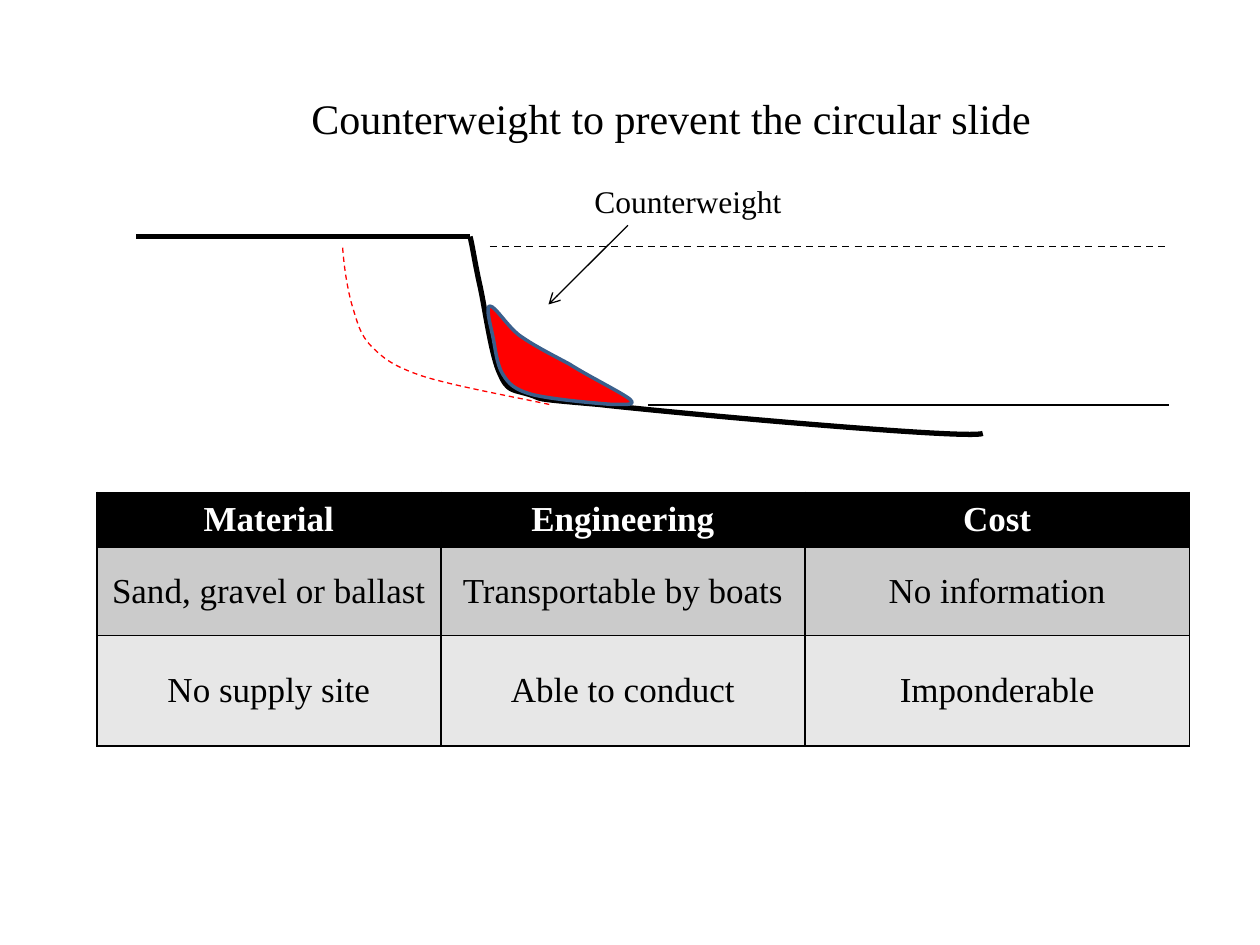
from dataclasses import dataclass

from lxml.etree import SubElement
from pptx import Presentation
from pptx.dml.color import RGBColor as Color
from pptx.enum.dml import MSO_LINE_DASH_STYLE as Dash
from pptx.enum.shapes import MSO_CONNECTOR as Connector
from pptx.enum.text import MSO_ANCHOR as Anchor, MSO_AUTO_SIZE as AutoSize, PP_ALIGN as Align
from pptx.oxml import parse_xml
from pptx.oxml.ns import nsdecls, qn
from pptx.util import Pt


@dataclass(frozen=True)
class Theme:
    font: str = "Times New Roman"
    title: int = 24
    label: int = 18
    cell: int = 20
    ink: str = "000000"
    paper: str = "FFFFFF"
    red: str = "FF0000"
    outline: str = "3A5F8C"
    bands: tuple = ("000000", "CBCBCB", "E7E7E7")


THEME = Theme()

# Bezier chains in points, relative to the section box: a start, then three points per curve.
SLOPE = [
    (483.6, 112.7), (476.4, 116.3), (308.6, 101.2), (264, 96.1),
    (222.2, 92.5), (233.8, 93.2), (224.4, 90.4),
    (215, 87.5), (212.2, 88.9), (207.8, 78.8),
    (202.8, 68.8), (199.2, 41.4), (196.3, 28.4),
    (193.4, 15.5), (192, 5.4), (190.6, 0.2),
]
SLIP_CIRCLE = [
    (235.9, 96.1), (219.4, 92.5), (179.8, 85.3), (162.5, 79.6),
    (145.9, 73.8), (140.9, 69.5), (134.4, 63),
    (127.9, 56.5), (126.5, 50), (123.6, 40.7),
    (120.7, 31.3), (118.6, 17.6), (117.8, 6.1),
]
COUNTERWEIGHT = [
    (225.8, 90.4), (236.6, 93.2), (261.8, 95.4), (271.2, 96.1),
    (280.6, 96.1), (285.6, 96.8), (282, 93.2),
    (277.7, 89.6), (257.5, 79.6), (247.4, 73.1),
    (236.6, 67.3), (226.6, 62.3), (218.6, 56.5),
    (211.4, 50.8), (205, 40), (202.1, 40),
    (199.2, 39.2), (202.1, 50), (203.5, 56.5),
    (205, 63), (205.7, 73.1), (209.3, 78.8),
    (212.9, 84.6), (215.8, 87.5), (225.8, 90.4),
]
ROWS = [
    ("Material", "Engineering", "Cost"),
    ("Sand, gravel or ballast", "Transportable by boats", "No information"),
    ("No supply site", "Able to conduct", "Imponderable"),
]


def style_text(para, size, color=THEME.ink, bold=False, align=Align.CENTER):
    para.alignment = align
    font = para.font
    font.name, font.size, font.bold = THEME.font, Pt(size), bold
    font.color.rgb = Color.from_string(color)


def style_line(line, color, width, dash=None):
    line.color.rgb = Color.from_string(color)
    line.width = Pt(width)
    if dash:
        line.dash_style = dash


def add_text(page, box, text, size, align=Align.CENTER, wrap=True):
    frame = page.shapes.add_textbox(*map(Pt, box)).text_frame
    frame.word_wrap = wrap
    frame.auto_size = AutoSize.SHAPE_TO_FIT_TEXT
    para = frame.paragraphs[0]
    para.text = text
    style_text(para, size, align=align)


def add_line(page, origin, start, end, width, dash=None, arrow=False):
    left, top = origin
    ends = (left + start[0], top + start[1], left + end[0], top + end[1])
    connector = page.shapes.add_connector(Connector.STRAIGHT, *map(Pt, ends))
    style_line(connector.line, THEME.ink, width, dash)
    properties = connector._element.spPr
    if arrow:
        SubElement(properties.find(qn("a:ln")), qn("a:tailEnd"), type="arrow")
    SubElement(properties, qn("a:effectLst"))


def bend_segments(shape):
    """Turn each three straight segments into one cubic Bezier curve."""
    segments = list(shape._element.iter(qn("a:lnTo")))
    for first in range(0, len(segments), 3):
        curve = parse_xml(f'<a:cubicBezTo {nsdecls("a")}/>')
        segments[first].addprevious(curve)
        for segment in segments[first:first + 3]:
            curve.append(segment[0])
            segment.getparent().remove(segment)


def add_curve(page, origin, chain, color, width, dash=None, fill=None):
    left, top = origin
    points = [(Pt(left + x), Pt(top + y)) for x, y in chain]
    builder = page.shapes.build_freeform(*points[0])
    builder.add_line_segments(points[1:], close=bool(fill))
    shape = builder.convert_to_shape()
    bend_segments(shape)
    shape.shadow.inherit = False
    if fill:
        shape.fill.solid()
        shape.fill.fore_color.rgb = Color.from_string(fill)
    else:
        shape.fill.background()
    style_line(shape.line, color, width, dash)


def add_section(page, origin):
    """Draw the quay slope, its slip circle and the counterweight."""
    left, top = origin
    add_line(page, origin, (0, 0.2), (190.6, 0.2), 3)
    add_line(page, origin, (292.2, 96.3), (590, 96.3), 1)
    add_curve(page, origin, SLOPE, THEME.ink, 3)
    add_line(page, origin, (202, 5.8), (590, 5.8), 1, Dash.DASH)
    add_curve(page, origin, SLIP_CIRCLE, THEME.red, 0.75, Dash.DASH)
    add_curve(page, origin, COUNTERWEIGHT, THEME.outline, 2, fill=THEME.red)
    add_line(page, origin, (280.8, -6.2), (235.4, 39), 0.75, arrow=True)
    add_text(page, (left + 254.6, top - 34.6, 122.4, 29), "Counterweight",
             THEME.label, Align.LEFT, wrap=False)


def add_borders(cell):
    properties = cell._tc.get_or_add_tcPr()
    for index, side in enumerate(("lnL", "lnR", "lnT", "lnB")):
        properties.insert(index, parse_xml(
            f'<a:{side} {nsdecls("a")} w="{Pt(1)}"><a:solidFill>'
            f'<a:srgbClr val="{THEME.ink}"/></a:solidFill></a:{side}>'))


def add_assessment(page, box, widths, heights):
    table = page.shapes.add_table(len(heights), len(widths), *map(Pt, box)).table
    for column, width in zip(table.columns, widths):
        column.width = Pt(width)
    for number, (row, height, texts) in enumerate(zip(table.rows, heights, ROWS)):
        row.height = Pt(height)
        header = number == 0
        for cell, text in zip(row.cells, texts):
            cell.text = text
            cell.vertical_anchor = Anchor.MIDDLE
            cell.fill.solid()
            cell.fill.fore_color.rgb = Color.from_string(THEME.bands[number])
            add_borders(cell)
            style_text(cell.text_frame.paragraphs[0], THEME.cell,
                       THEME.paper if header else THEME.ink, bold=header)


def main():
    deck = Presentation()
    deck.slide_width, deck.slide_height = Pt(720), Pt(540)
    page = deck.slides.add_slide(deck.slide_layouts[6])
    add_text(page, (77.6, 49.3, 612, 36.7),
             "Counterweight to prevent the circular slide", THEME.title)
    add_section(page, (78, 135))
    add_assessment(page, (55.3, 281.3, 624.3, 145), (196.6, 208.1, 219.6), (31.3, 50.4, 63.3))
    deck.save("out.pptx")


if __name__ == "__main__":
    main()
